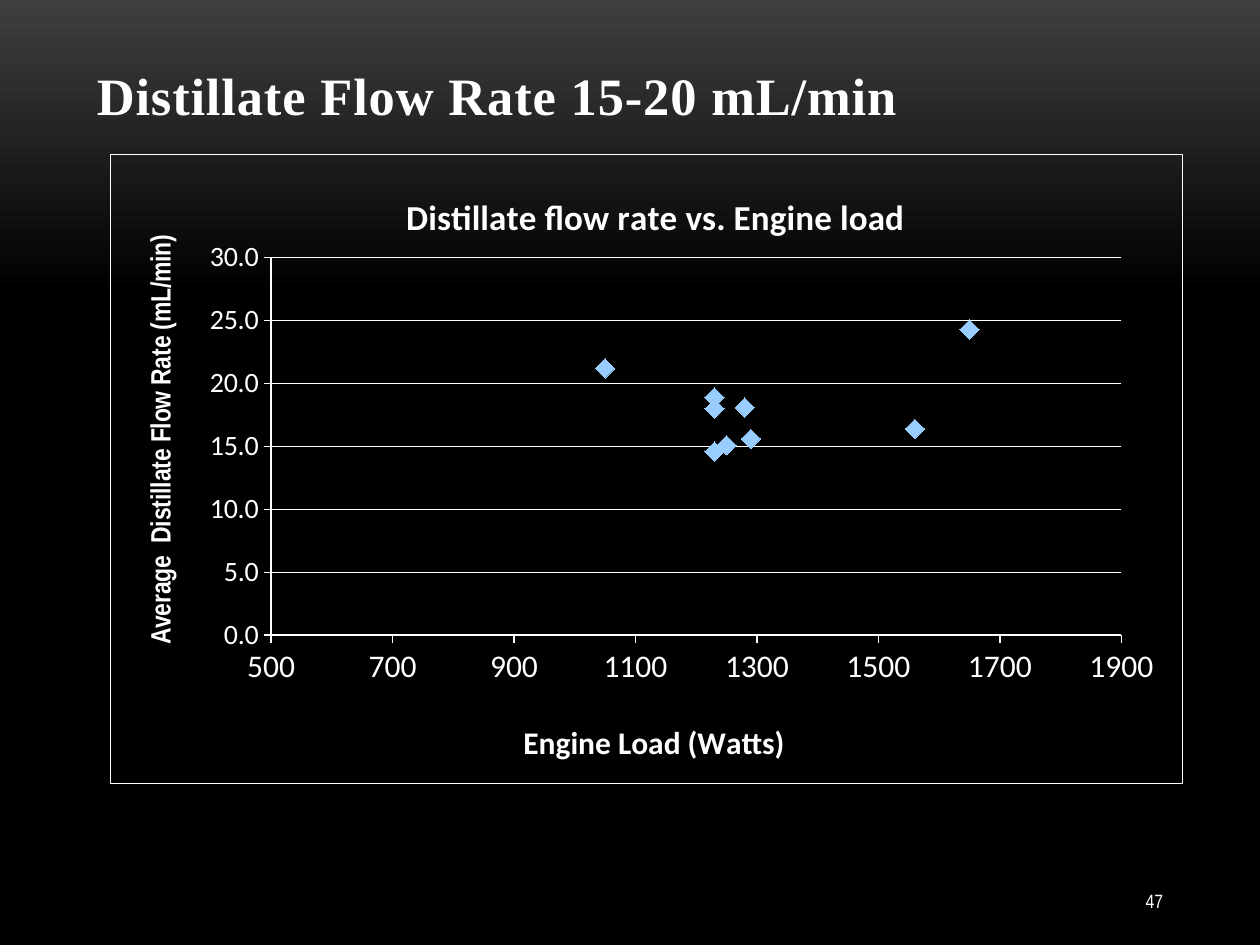
from lxml import etree
from copy import deepcopy
from pptx import Presentation
from pptx import util as u
from pptx.chart.data import XyChartData
from pptx.dml.color import RGBColor
from pptx.enum import chart as kinds, text
from pptx.oxml import parse_xml
from pptx.oxml.ns import nsdecls, qn

WIDTH, HEIGHT = u.Inches(10), u.Inches(7.5)
WHITE, BLACK, GREY, BLUE = "FFFFFF", "000000", "3F3F3F", "99CCFF"
NARROW, SANS, SERIF = "Arial Narrow", "Calibri", "Times New Roman"
LOADS = [1560, 1650, 1250, 1050, 1290, 1230, 1230, 1280, 1230]
FLOWS = [16.4, 24.3, 15.1, 21.2, 15.6, 18.9, 18, 18.1, 14.6]


def color(value):
    return RGBColor.from_string(value)


def set_font(font, name, size, bold=False):
    font.name, font.size, font.bold = name, u.Pt(size), bold
    font.color.rgb = color(WHITE)


def place(left, top, width, height):
    return (round(left * WIDTH), round(top * HEIGHT),
            round(width * WIDTH), round(height * HEIGHT))


def paint_background(page):
    fill = page.background.fill
    fill.gradient()
    fill.gradient_angle = 270
    stops = next(page.element.iter(qn("a:gsLst")))
    stops.append(deepcopy(stops[-1]))
    shades = [(0, GREY), (0.31, BLACK), (1, BLACK)]
    for stop, (position, shade) in zip(fill.gradient_stops, shades):
        stop.position = position
        stop.color.rgb = color(shade)


def add_text(page, words, area, font, size, anchor, align, bold=False, spacing=0):
    frame = page.shapes.add_textbox(*place(*area)).text_frame
    frame.word_wrap = True
    frame.vertical_anchor = anchor
    para = frame.paragraphs[0]
    para.alignment = align
    span = para.add_run()
    span.text = words
    set_font(para.font, font, size, bold)
    if spacing:
        span.font._element.set("spc", str(spacing))


def add_layout(parent, **settings):
    layout = parent.find(qn("c:layout"))
    if layout is None:
        layout = parse_xml(f"<c:layout {nsdecls('c')}/>")
        before = parent.find(qn("c:tx"))
        if before is None:
            parent.insert(0, layout)
        else:
            before.addnext(layout)
    manual = etree.SubElement(layout, qn("c:manualLayout"))
    for name, value in settings.items():
        etree.SubElement(manual, qn(f"c:{name}")).set("val", str(value))


def set_title(title, words, font, size, x, y):
    frame = title.text_frame
    frame.text = words
    set_font(frame.paragraphs[0].font, font, size, True)
    add_layout(title._element, xMode="edge", yMode="edge", x=x, y=y)


def set_axis(axis, low, high, step, size, number_format, grid):
    axis.minimum_scale, axis.maximum_scale, axis.major_unit = low, high, step
    axis.has_major_gridlines = grid
    axis.major_tick_mark = kinds.XL_TICK_MARK.OUTSIDE
    axis.minor_tick_mark = kinds.XL_TICK_MARK.NONE
    axis.tick_labels.number_format = number_format
    axis.tick_labels.number_format_is_linked = False
    set_font(axis.tick_labels.font, SANS, size)
    lines = [axis.format.line]
    if grid:
        lines.append(axis.major_gridlines.format.line)
    for line in lines:
        line.color.rgb = color(WHITE)
        line.width = u.Pt(0.75)


def add_border(chart):
    border = parse_xml(
        f"<c:spPr {nsdecls('c', 'a')}><a:noFill/><a:ln w=\"{u.Pt(0.75)}\"><a:solidFill>"
        f"<a:srgbClr val=\"{WHITE}\"/></a:solidFill></a:ln></c:spPr>")
    chart._chartSpace.find(qn("c:chart")).addnext(border)


def style_series(series):
    series.smooth = False
    series.format.line.fill.background()
    marker = series.marker
    marker.style = kinds.XL_MARKER_STYLE.DIAMOND
    marker.size = 11
    marker.format.fill.solid()
    marker.format.fill.fore_color.rgb = color(BLUE)
    marker.format.line.fill.background()


def add_scatter(page, area):
    data = XyChartData()
    points = data.add_series("Series 1")
    for load, flow in zip(LOADS, FLOWS):
        points.add_data_point(load, flow)
    chart = page.shapes.add_chart(
        kinds.XL_CHART_TYPE.XY_SCATTER, *place(*area), data).chart
    set_font(chart.font, NARROW, 10)
    chart.has_legend = False
    chart.plots[0].vary_by_categories = False
    style_series(chart.plots[0].series[0])
    set_axis(chart.category_axis, 500, 1900, 200, 18, "0", False)
    set_axis(chart.value_axis, 0, 30, 5, 16, "0.0", True)
    set_title(chart.chart_title, "Distillate flow rate vs. Engine load",
              SANS, 20, 0.27, 0.05)
    set_title(chart.category_axis.axis_title, "Engine Load (Watts)",
              SANS, 18, 0.38, 0.89)
    set_title(chart.value_axis.axis_title, "Average  Distillate Flow Rate (mL/min)",
              NARROW, 16, 0.03, 0.12)
    plot_area = next(chart._chartSpace.iter(qn("c:plotArea")))
    add_layout(plot_area, layoutTarget="inner", xMode="edge", yMode="edge",
               x=0.15, y=0.164, w=0.793, h=0.6)
    add_border(chart)


def main():
    deck = Presentation()
    deck.slide_width, deck.slide_height = WIDTH, HEIGHT
    page = deck.slides.add_slide(deck.slide_layouts[6])
    paint_background(page)
    add_text(page, "47", (0.825, 0.927, 0.108, 0.053), NARROW, 11,
             text.MSO_ANCHOR.MIDDLE, text.PP_ALIGN.RIGHT)
    add_text(page, "Distillate Flow Rate 15-20 mL/min", (0.067, 0.044, 0.888, 0.096),
             SERIF, 30, text.MSO_ANCHOR.BOTTOM, text.PP_ALIGN.LEFT, True, 50)
    add_scatter(page, (0.087, 0.163, 0.852, 0.667))
    deck.save("out.pptx")


if __name__ == "__main__":
    main()
